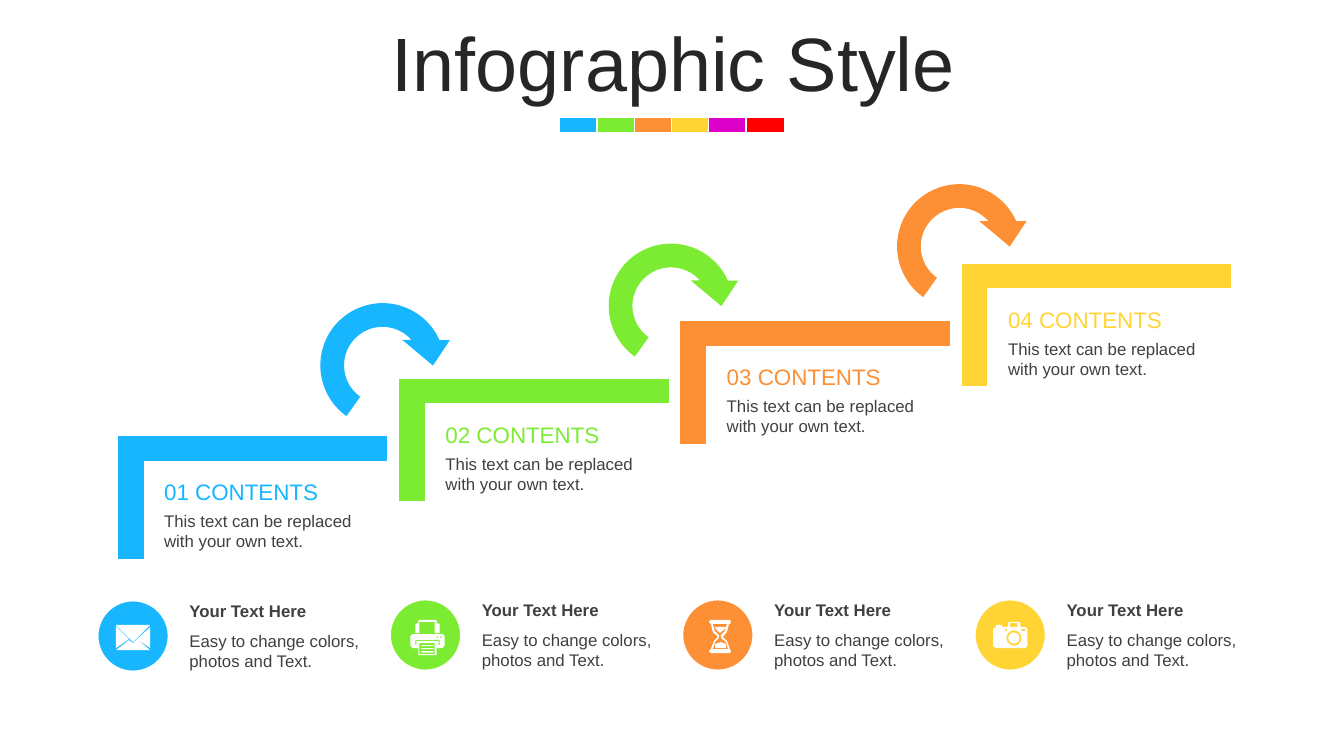
from math import cos, sin, pi
from pptx import Presentation
from pptx.dml.color import RGBColor
from pptx.enum.shapes import MSO_SHAPE as Shape
from pptx.enum.text import MSO_ANCHOR as Anchor, PP_ALIGN as Align
from pptx.util import Inches, Pt

TITLE = "Infographic Style"
STRIP = ["17B6FF", "7CEC32", "FD9034", "FFD434", "DC00C8", "FF0000"]
WHITE, DARK, GRAY = "FFFFFF", "262626", "404040"
STEP_BODY = "This text can be replaced with your own text."
STEPS = ["01 CONTENTS", "02 CONTENTS", "03 CONTENTS", "04 CONTENTS"]
FEATURE_HEADING = "Your Text Here"
FEATURE_BODY = "Easy to change colors, photos and Text."
STEP_RUN, STEP_RISE = 2.79, 0.57
ARROW_RUN, ARROW_RISE = 2.86, 0.59
FEATURE_RUN = 2.9


def rectangle(left, top, right, bottom):
    return [(left, top), (right, top), (right, bottom), (left, bottom)]


def circle(x, y, radius, count=32):
    angles = [2 * pi * i / count for i in range(count)]
    return [(x + radius * cos(a), y + radius * sin(a)) for a in angles]


ENVELOPE = [
    [(18, 24), (52, 24), (35, 41)],
    [(18, 25), (31, 38), (18, 47)],
    [(52, 26), (52, 47), (39, 38)],
    [(39, 38), (52, 49), (18, 49), (31, 39), (35, 42)],
]
PRINTER = [
    rectangle(31, 51, 43, 52.5),
    rectangle(31, 48, 43, 49),
    rectangle(31, 45, 43, 46),
    rectangle(29, 43, 44, 54),
    [(25, 40), (25, 45), (26, 45), (26, 41), (48, 41), (48, 45), (49, 45), (49, 40)],
    circle(50.3, 37, 0.8),
    circle(46.8, 37, 0.8),
    [(22, 34), (52, 34), (54, 36), (54, 45), (52, 48), (46, 48),
     (46, 55), (28, 55), (28, 48), (22, 48), (20, 45), (20, 36)],
    [(28, 20), (46, 20), (46, 23), (49, 24), (49, 33), (44, 33),
     (44, 22), (29, 22), (29, 33), (25, 33), (25, 24), (28, 23)],
]
HOURGLASS = [
    [(38, 42), (43, 44), (43, 48), (32, 48), (32, 44)],
    [(32, 27), (43, 27), (42, 29), (37, 33), (33, 29)],
    [(30, 24), (32, 31), (36, 35), (36, 38), (32, 42), (30, 49),
     (45, 49), (43, 42), (38, 38), (38, 35), (42, 31), (44, 24)],
    [(28, 20), (47, 20), (48, 22), (47, 24), (46, 24), (44, 32), (40, 37),
     (44, 41), (47, 49), (48, 51), (47, 53), (28, 53), (26, 51), (28, 49),
     (31, 41), (35, 37), (30, 32), (28, 24), (26, 22)],
]
CAMERA = [
    circle(38.7, 38, 5.5),
    circle(38.7, 38, 7.5),
    rectangle(30, 29, 32, 31),
    rectangle(46, 29, 50, 31),
    rectangle(35, 23, 42, 27),
    [(34, 22), (44, 22), (45, 23), (45, 27), (50, 27), (52, 29), (52, 46),
     (50, 48), (21, 48), (18, 46), (18, 29), (21, 27), (21, 25), (27, 25),
     (27, 27), (33, 27), (33, 23)],
]
FEATURES = [(5.96, ENVELOPE), (5.95, PRINTER), (5.95, HOURGLASS), (5.95, CAMERA)]

deck = Presentation()
deck.slide_width, deck.slide_height = Inches(13.33), Inches(7.5)
page = deck.slides.add_slide(deck.slide_layouts[6])


def paint(shape, color, outlined=False):
    shape.shadow.inherit = False
    shape.fill.solid()
    shape.fill.fore_color.rgb = RGBColor.from_string(color)
    if outlined:
        shape.line.color.rgb = RGBColor.from_string(WHITE)
        shape.line.width = Pt(1)
    else:
        shape.line.fill.background()


def add_preset(kind, place, color, outlined=True, adjustments=()):
    shape = page.shapes.add_shape(kind, *map(Inches, place))
    paint(shape, color, outlined)
    for i, value in enumerate(adjustments):
        shape.adjustments[i] = value
    return shape


def add_text(text, place, size, color, bold=False, anchor=Anchor.TOP):
    box = page.shapes.add_textbox(*map(Inches, place))
    frame = box.text_frame
    frame.word_wrap = True
    frame.vertical_anchor = anchor
    frame.text = text
    font = frame.paragraphs[0].runs[0].font
    font.name, font.size, font.bold = "Arial", Pt(size), bold
    font.color.rgb = RGBColor.from_string(color)
    return frame


def add_icon(contours, left, top):
    placed = [[(Inches(left + x / 100), Inches(top + y / 100)) for x, y in contour]
              for contour in contours]
    builder = page.shapes.build_freeform(*placed[0][0])
    builder.add_line_segments(placed[0][1:])
    for contour in placed[1:]:
        builder.move_to(*contour[0])
        builder.add_line_segments(contour[1:])
    paint(builder.convert_to_shape(), WHITE)


for i, color in enumerate(STRIP):
    add_preset(Shape.RECTANGLE, (5.55 + 0.37 * i, 1.16, 0.38, 0.16), color)

title = add_text(TITLE, (0.35, 0.24, 12.66, 0.79), 54, DARK, anchor=Anchor.MIDDLE)
title.margin_top = Inches(0.1)
title.paragraphs[0].alignment = Align.CENTER
title.paragraphs[0].line_spacing = 0.9
title.paragraphs[0].space_before = Pt(10)

for i, heading in enumerate(STEPS):
    run, rise = STEP_RUN * i, STEP_RISE * i
    bracket = add_preset(Shape.CORNER, (1.89 + run, 3.59 - rise, 1.23, 2.69),
                         STRIP[i], adjustments=(0.22, 0.21))
    bracket.rotation = 90
    add_text(STEP_BODY, (1.53 + run, 5.02 - rise, 2.14, 0.5), 12, GRAY)
    add_text(heading, (1.53 + run, 4.69 - rise, 2.13, 0.37), 16, STRIP[i],
             anchor=Anchor.BOTTOM)

for i, color in enumerate(STRIP[:len(STEPS) - 1]):
    add_preset(Shape.CIRCULAR_ARROW,
               (3.06 + ARROW_RUN * i, 2.89 - ARROW_RISE * i, 1.47, 1.47), color,
               False, (0.16, 18.21, 197.9, 75.28, 0.16))

for i, (top, icon) in enumerate(FEATURES):
    left = 0.97 + FEATURE_RUN * i
    add_preset(Shape.OVAL, (left, top, 0.7, 0.7), STRIP[i])
    add_text(FEATURE_HEADING, (left + 0.81, top - 0.05, 1.95, 0.3), 12, GRAY, bold=True)
    add_text(FEATURE_BODY, (left + 0.81, top + 0.25, 1.95, 0.5), 12, GRAY)
    add_icon(icon, left, top)

deck.save("out.pptx")
